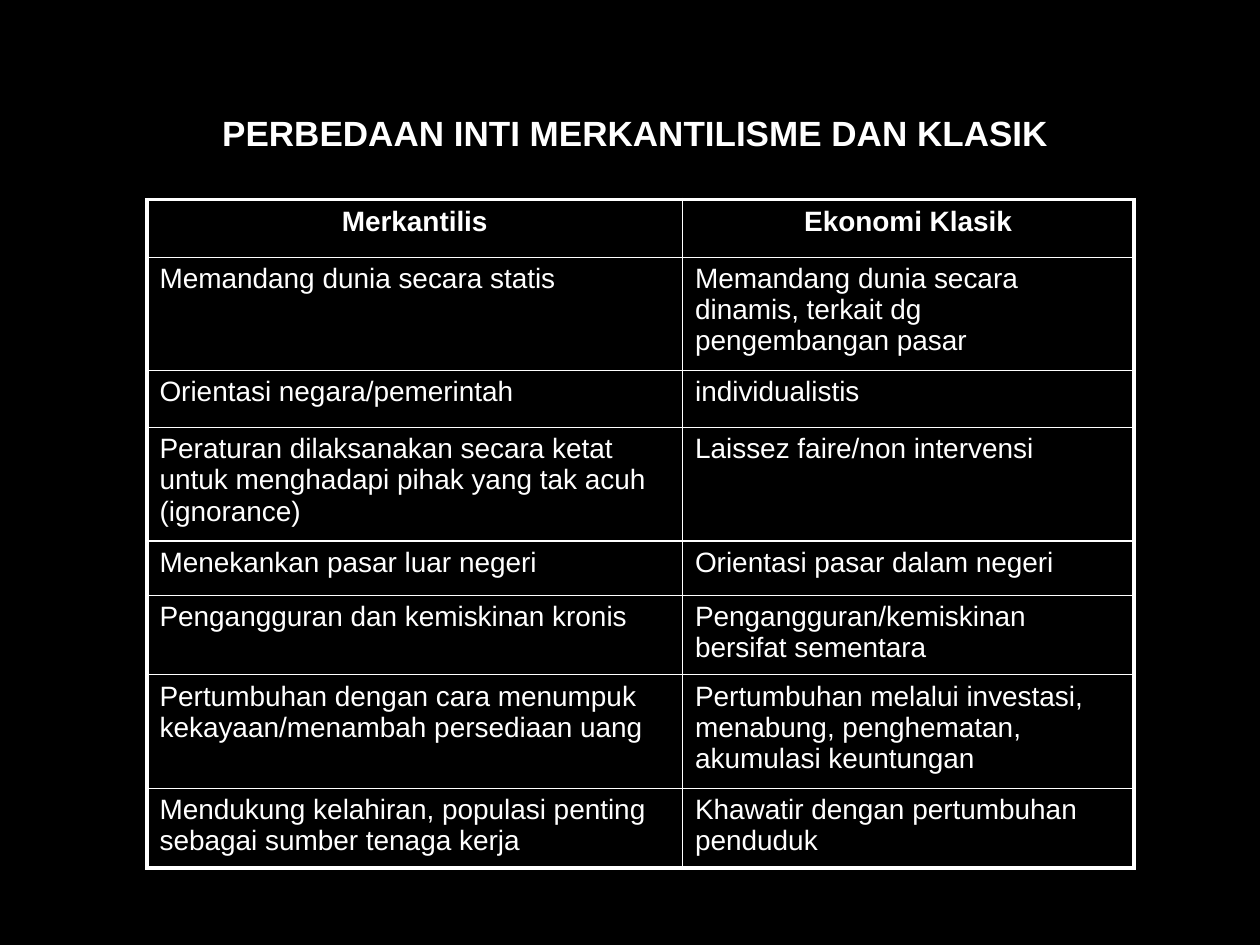
import dataclasses

import pptx
import pptx.dml.color
import pptx.enum.text
import pptx.oxml
import pptx.oxml.ns
import pptx.util

Pt = pptx.util.Pt
Align = pptx.enum.text.PP_ALIGN


@dataclasses.dataclass(frozen=True)
class Theme:
    paper: str = "000000"
    ink: str = "FFFFFF"
    font: str = "Arial"
    title: float = 20
    body: float = 16
    thin: float = 1
    thick: float = 2.25


THEME = Theme()
TITLE = "PERBEDAAN INTI MERKANTILISME DAN KLASIK"
WIDTHS = (306, 258)
ROWS = (
    (33, "Merkantilis", "Ekonomi Klasik"),
    (64.6, "Memandang dunia secara statis",
     "Memandang dunia secara dinamis, terkait dg pengembangan pasar"),
    (32.6, "Orientasi negara/pemerintah", "individualistis"),
    (65, "Peraturan dilaksanakan secara ketat untuk menghadapi pihak yang tak acuh (ignorance)",
     "Laissez faire/non intervensi"),
    (31, "Menekankan pasar luar negeri", "Orientasi pasar dalam negeri"),
    (45.3, "Pengangguran dan kemiskinan kronis",
     "Pengangguran/kemiskinan bersifat sementara"),
    (65, "Pertumbuhan dengan cara menumpuk kekayaan/menambah persediaan uang",
     "Pertumbuhan melalui investasi, menabung, penghematan, akumulasi keuntungan"),
    (45.5, "Mendukung kelahiran, populasi penting sebagai sumber tenaga kerja",
     "Khawatir dengan pertumbuhan penduduk"),
)


def color(code):
    return pptx.dml.color.RGBColor.from_string(code)


def write(frame, text, size, bold, align):
    frame.text = text
    frame.word_wrap = True
    para = frame.paragraphs[0]
    para.alignment = align
    para.space_before = Pt(0)
    font = para.runs[0].font
    font.name = THEME.font
    font.size = Pt(size)
    font.bold = bold
    font.color.rgb = color(THEME.ink)


def add_title(slide):
    shape = slide.shapes.title
    shape.left, shape.top = Pt(114), Pt(60)
    shape.width, shape.height = Pt(498), Pt(31)
    frame = shape.text_frame
    write(frame, TITLE, THEME.title, True, Align.CENTER)
    frame.auto_size = pptx.enum.text.MSO_AUTO_SIZE.NONE
    frame.vertical_anchor = pptx.enum.text.MSO_ANCHOR.MIDDLE


def add_edges(cell, row, col):
    outer = {"L": col == 0, "R": col == len(WIDTHS) - 1,
             "T": row == 0, "B": row == len(ROWS) - 1}
    props = cell._tc.get_or_add_tcPr()
    for side, edge in outer.items():
        width = Pt(THEME.thick if edge else THEME.thin)
        props.append(pptx.oxml.parse_xml(
            f'<a:ln{side} {pptx.oxml.ns.nsdecls("a")} w="{width}">'
            f'<a:solidFill><a:srgbClr val="{THEME.ink}"/></a:solidFill>'
            f'</a:ln{side}>'))


def add_grid(slide):
    high = sum(row[0] for row in ROWS)
    table = slide.shapes.add_table(
        len(ROWS), len(WIDTHS), Pt(84), Pt(114), Pt(sum(WIDTHS)), Pt(high)).table
    table.first_row = table.horz_banding = False
    for col, width in zip(table.columns, WIDTHS):
        col.width = Pt(width)
    for i, (height, *texts) in enumerate(ROWS):
        table.rows[i].height = Pt(height)
        head = i == 0
        for j, text in enumerate(texts):
            cell = table.cell(i, j)
            write(cell.text_frame, text, THEME.body, head,
                  Align.CENTER if head else Align.LEFT)
            add_edges(cell, i, j)
            cell.fill.background()


def main():
    deck = pptx.Presentation()
    deck.slide_width, deck.slide_height = Pt(720), Pt(540)
    slide = deck.slides.add_slide(deck.slide_layouts[5])
    fill = slide.background.fill
    fill.solid()
    fill.fore_color.rgb = color(THEME.paper)
    add_grid(slide)
    add_title(slide)
    deck.save("out.pptx")


if __name__ == "__main__":
    main()
